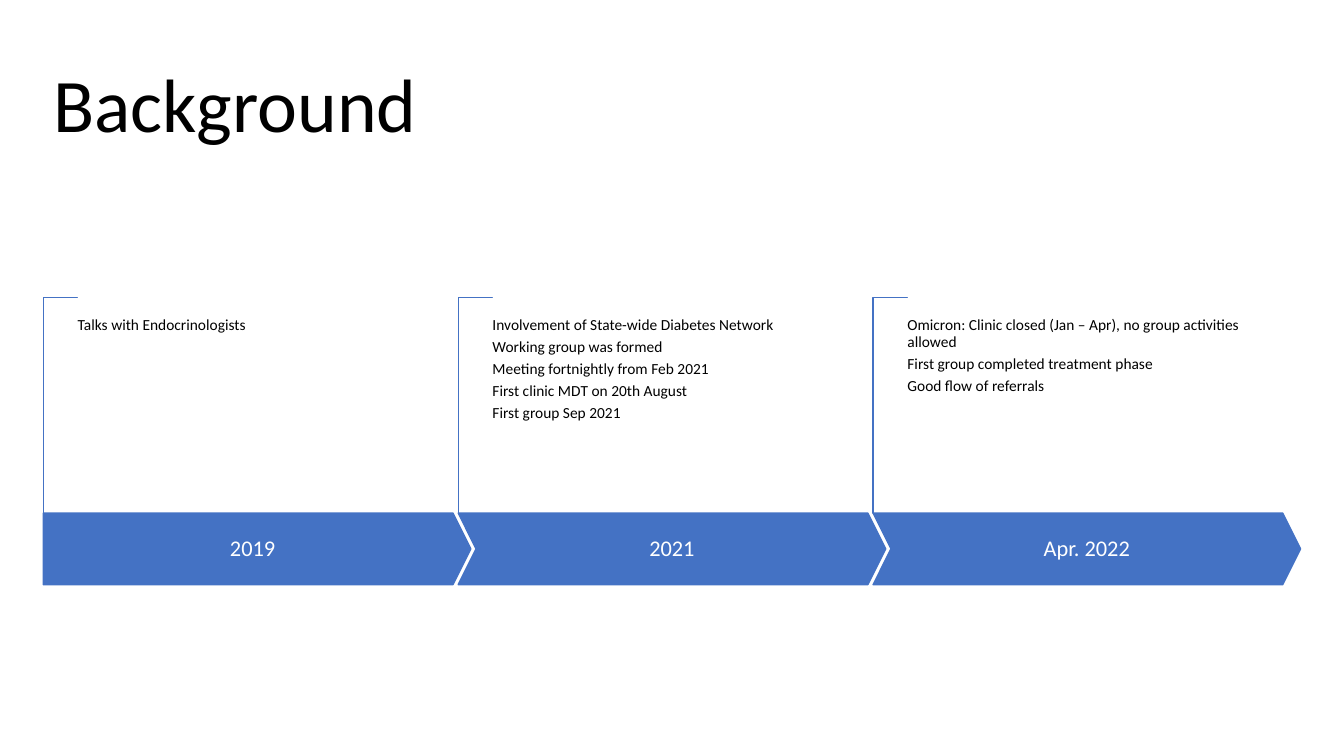
from pptx import Presentation
from pptx.dml.color import RGBColor
from pptx.enum.shapes import MSO_SHAPE as Shape
from pptx.enum.text import MSO_ANCHOR as Anchor, PP_ALIGN as Align
from pptx.util import Inches, Pt

# Content
TITLE = "Background"
STAGES = [
    ("2019", ["Talks with Endocrinologists"]),
    ("2021", [
        "Involvement of State-wide Diabetes Network",
        "Working group was formed",
        "Meeting fortnightly from Feb 2021",
        "First clinic MDT on 20th August",
        "First group Sep 2021",
    ]),
    ("Apr. 2022", [
        "Omicron: Clinic closed (Jan – Apr), no group activities allowed",
        "First group completed treatment phase",
        "Good flow of referrals",
    ]),
]

# Style
BLUE = RGBColor(0x44, 0x72, 0xC4)
WHITE = RGBColor(0xFF, 0xFF, 0xFF)
BLACK = RGBColor(0, 0, 0)
FONT = "Calibri"

# Grid, in inches
LEFT, STEP = 0.43, 4.115
BAR_TOP, BAR_W, BAR_H = 5.09, 4.24, 0.71
MARK_W, MARK_H = 0.34, 2.14
NOTE_TOP, NOTE_W, NOTE_H = 3.15, 3.44, 1.34


def place(item, x, y, w, h):
    item.left, item.top = Inches(x), Inches(y)
    item.width, item.height = Inches(w), Inches(h)


def write(frame, lines, size, color, align, anchor, after=0):
    frame.text = "\n".join(lines)
    frame.word_wrap = True
    frame.vertical_anchor = anchor
    for para in frame.paragraphs:
        para.alignment = align
        para.line_spacing = 0.9
        para.space_before = Pt(0)
        para.space_after = Pt(after)
        for run in para.runs:
            run.font.name = FONT
            run.font.size = Pt(size)
            run.font.color.rgb = color


def inset(frame, side, end):
    frame.margin_left = frame.margin_right = Inches(side)
    frame.margin_top = frame.margin_bottom = Inches(end)


def draw(shapes, kind, box, fill, ratios):
    item = shapes.add_shape(kind, *(Inches(n) for n in box))
    item.shadow.inherit = False
    item.fill.solid()
    item.fill.fore_color.rgb = fill
    item.line.color.rgb = BLUE
    item.line.width = Pt(1)
    for i, ratio in enumerate(ratios):
        item.adjustments[i] = ratio
    return item


def main():
    deck = Presentation()
    deck.slide_width, deck.slide_height = Inches(13.33), Inches(7.5)
    slide = deck.slides.add_slide(deck.slide_layouts[5])
    shapes = slide.shapes

    # Title
    place(shapes.title, LEFT, 0.35, 12.48, 1.45)
    write(shapes.title.text_frame, [TITLE], 54, BLACK, Align.LEFT, Anchor.MIDDLE)

    for i, (date, notes) in enumerate(STAGES):
        x = LEFT + i * STEP

        # Corner mark, turned about its centre to stand on the bar
        mid_x, mid_y = x + MARK_W / 2, BAR_TOP - MARK_H / 2
        box = (mid_x - MARK_H / 2, mid_y - MARK_W / 2, MARK_H, MARK_W)
        mark = draw(shapes, Shape.CORNER, box, WHITE, (0.01, 0.01))
        mark.rotation = 90

        # Dated arrow
        kind = Shape.CHEVRON if i else Shape.PENTAGON
        bar = draw(shapes, kind, (x, BAR_TOP, BAR_W, BAR_H), BLUE, (0.25,))
        inset(bar.text_frame, 0.11, 0.22)
        write(bar.text_frame, [date], 16, WHITE, Align.CENTER, Anchor.MIDDLE)

        # Notes
        note = shapes.add_textbox(0, 0, 0, 0)
        place(note, x + MARK_W, NOTE_TOP, NOTE_W, NOTE_H)
        inset(note.text_frame, 0, 0)
        write(note.text_frame, notes, 11, BLACK, Align.LEFT, Anchor.TOP, 3.7)

    deck.save("out.pptx")


if __name__ == "__main__":
    main()
